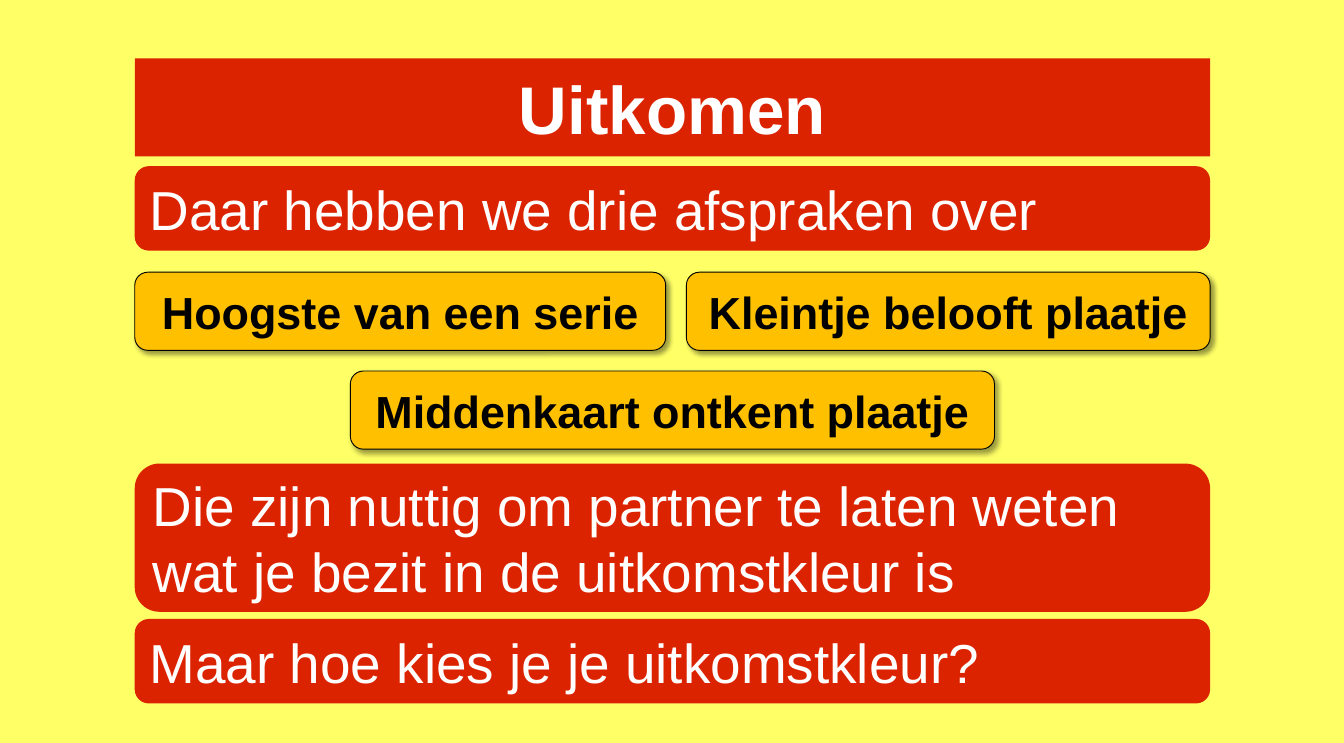
from dataclasses import dataclass

from lxml import etree
from pptx import Presentation
from pptx.dml.color import RGBColor
from pptx.enum import shapes, text
from pptx.oxml.ns import qn
from pptx.util import Inches, Pt

COLOURS = {
    "background": "FFFF66",
    "banner": "DC2300",
    "banner_text": "FFFFFF",
    "rule": "FFC000",
    "ink": "000000",
}
MARGIN = 1.5
BANNER_WIDTH = 11.97
RULE_HEIGHT = 0.87
CORNER = 0.167


@dataclass(frozen=True)
class Banner:
    wording: str
    top: float
    height: float


@dataclass(frozen=True)
class Rule:
    wording: str
    left: float
    top: float
    width: float
    pointer: float


HEADING = Banner("Uitkomen", 0.65, 1.09)
BANNERS = [
    Banner("Daar hebben we drie afspraken over", 1.85, 0.94),
    Banner(
        "Die zijn nuttig om partner te laten weten wat je bezit in de uitkomstkleur is",
        5.16,
        1.65,
    ),
    Banner("Maar hoe kies je je uitkomstkleur?", 6.89, 0.94),
]
RULES = [
    Rule("Kleintje belooft plaatje", 7.64, 3.03, 5.83, -0.181),
    Rule("Hoogste van een serie", MARGIN, 3.03, 5.91, -0.201),
    Rule("Middenkaart ontkent plaatje", 3.9, 4.13, 7.17, -0.226),
]


def rgb(name: str) -> RGBColor:
    return RGBColor.from_string(COLOURS[name])


def write(shape, wording: str, size: int, colour: str, bold: bool, centred: bool) -> None:
    frame = shape.text_frame
    frame.word_wrap = True
    frame.auto_size = text.MSO_AUTO_SIZE.NONE
    frame.vertical_anchor = text.MSO_ANCHOR.MIDDLE
    line = frame.paragraphs[0]
    line.alignment = text.PP_ALIGN.CENTER if centred else text.PP_ALIGN.LEFT
    run = line.add_run()
    run.text = wording
    run.font.name = "Arial"
    run.font.size = Pt(size)
    run.font.bold = bold
    run.font.color.rgb = rgb(colour)


def style_banner(shape) -> None:
    shape.fill.solid()
    shape.fill.fore_color.rgb = rgb("banner")
    shape.line.fill.background()
    frame = shape.text_frame
    frame.margin_left = frame.margin_right = Inches(0.12)
    frame.margin_top = frame.margin_bottom = Inches(0.06)


def place_heading(slide, heading: Banner) -> None:
    title = slide.shapes.title
    title.left, title.top = Inches(MARGIN), Inches(heading.top)
    title.width, title.height = Inches(BANNER_WIDTH), Inches(heading.height)
    outline = etree.SubElement(title.element.spPr, qn("a:prstGeom"), prst="roundRect")
    etree.SubElement(outline, qn("a:avLst"))
    style_banner(title)
    write(title, heading.wording, 54, "banner_text", bold=True, centred=True)


def add_banner(slide, banner: Banner) -> None:
    panel = slide.shapes.add_shape(
        shapes.MSO_SHAPE.ROUNDED_RECTANGLE,
        Inches(MARGIN), Inches(banner.top), Inches(BANNER_WIDTH), Inches(banner.height),
    )
    panel.adjustments[0] = CORNER
    panel.shadow.inherit = False
    style_banner(panel)
    write(panel, banner.wording, 44, "banner_text", bold=False, centred=False)


def cast_shadow(shape) -> None:
    shape.shadow.inherit = False
    effects = shape.element.spPr.find(qn("a:effectLst"))
    shadow = etree.SubElement(
        effects, qn("a:outerShdw"),
        blurRad=str(Pt(4)), dist=str(Pt(3)), dir=str(45 * 60000),
        algn="tl", rotWithShape="0",
    )
    tint = etree.SubElement(shadow, qn("a:srgbClr"), val=COLOURS["ink"])
    etree.SubElement(tint, qn("a:alpha"), val="40000")


def add_rule(slide, rule: Rule) -> None:
    card = slide.shapes.add_shape(
        shapes.MSO_SHAPE.ROUNDED_RECTANGULAR_CALLOUT,
        Inches(rule.left), Inches(rule.top), Inches(rule.width), Inches(RULE_HEIGHT),
    )
    for index, value in enumerate((-0.5, rule.pointer, CORNER)):
        card.adjustments[index] = value
    card.fill.solid()
    card.fill.fore_color.rgb = rgb("rule")
    card.line.color.rgb = rgb("ink")
    card.line.width = Pt(0.75)
    cast_shadow(card)
    write(card, rule.wording, 36, "ink", bold=True, centred=True)


def main() -> None:
    deck = Presentation()
    deck.slide_width, deck.slide_height = Inches(14.96), Inches(8.27)
    slide = deck.slides.add_slide(deck.slide_layouts.get_by_name("Title Only"))
    slide.background.fill.solid()
    slide.background.fill.fore_color.rgb = rgb("background")
    place_heading(slide, HEADING)
    for banner in BANNERS:
        add_banner(slide, banner)
    for rule in RULES:
        add_rule(slide, rule)
    deck.save("out.pptx")


if __name__ == "__main__":
    main()
